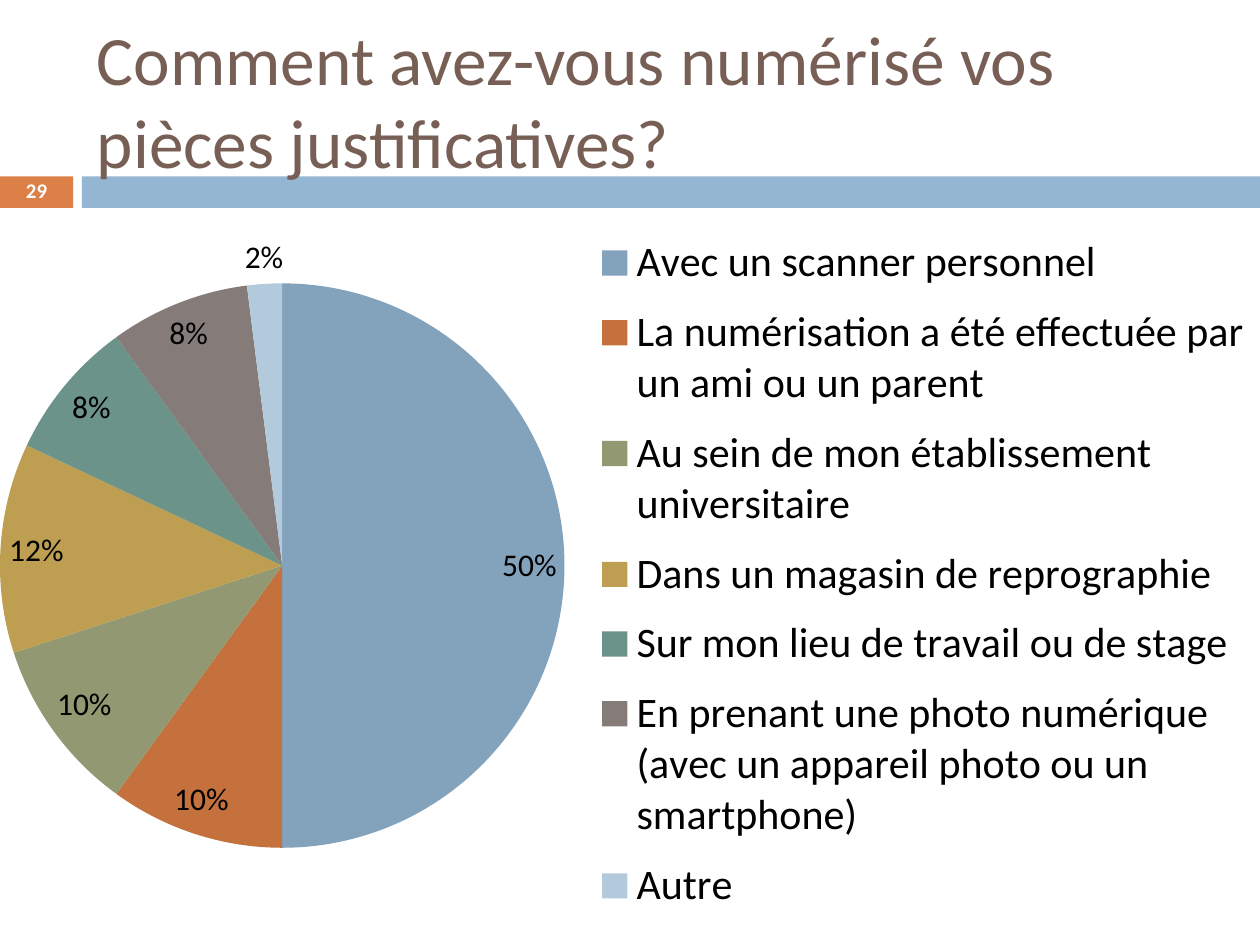
from lxml.etree import SubElement
from pptx import Presentation
from pptx.chart.data import CategoryChartData
from pptx.dml.color import RGBColor
from pptx.enum.chart import XL_CHART_TYPE, XL_LABEL_POSITION, XL_LEGEND_POSITION
from pptx.enum.shapes import MSO_SHAPE
from pptx.enum.text import MSO_ANCHOR, PP_ALIGN
from pptx.oxml.ns import qn
from pptx.util import Inches, Pt

FONT = "Calibri"
TITLE = "Comment avez-vous numérisé vos pièces justificatives?"
PAGE_NUMBER = "29"
ANSWERS = [  # label, percentage, slice colour
    ("Avec un scanner personnel", 50, "83A2BC"),
    ("La numérisation a été effectuée par un ami ou un parent", 10, "C4713E"),
    ("Au sein de mon établissement universitaire", 10, "929871"),
    ("Dans un magasin de reprographie", 12, "BE9E50"),
    ("Sur mon lieu de travail ou de stage", 8, "6C9389"),
    ("En prenant une photo numérique (avec un appareil photo ou un smartphone)", 8, "857C7A"),
    ("Autre", 2, "B3CADD"),
]
BANDS = [((0, 1.4, 0.58, 0.25), "DD8047"), ((0.65, 1.4, 9.35, 0.25), "94B6D2")]
PIE_LAYOUT = (0, 0.107, 0.448, 0.762)
LEGEND_LAYOUT = (0.465, 0.02, 0.535, 0.96)


def color(value):
    return RGBColor.from_string(value)


def add_band(slide, box, fill):
    shape = slide.shapes.add_shape(MSO_SHAPE.RECTANGLE, *map(Inches, box))
    shape.shadow.inherit = False
    shape.fill.solid()
    shape.fill.fore_color.rgb = color(fill)
    shape.line.fill.background()


def add_text(slide, box, text, size, fill, bold=False, align=PP_ALIGN.LEFT, spacing=1.0):
    frame = slide.shapes.add_textbox(*map(Inches, box)).text_frame
    frame.word_wrap = True
    frame.vertical_anchor = MSO_ANCHOR.MIDDLE
    paragraph = frame.paragraphs[0]
    paragraph.alignment = align
    paragraph.line_spacing = spacing
    run = paragraph.add_run()
    run.text = text
    set_font(run.font, size, fill, bold)


def set_font(font, size, fill="000000", bold=False):
    font.name, font.size, font.bold = FONT, Pt(size), bold
    font.color.rgb = color(fill)


def set_layout(element, box, inner=False):
    """Place a plot area or legend by fractions of the chart's size."""
    for old in element.findall(qn("c:layout")):
        element.remove(old)
    layout = element.makeelement(qn("c:layout"))
    manual = SubElement(layout, qn("c:manualLayout"))
    settings = [("layoutTarget", "inner")] if inner else []
    settings += [("xMode", "edge"), ("yMode", "edge"), *zip("xywh", box)]
    for name, value in settings:
        SubElement(manual, qn(f"c:{name}")).set("val", str(value))
    position = element.find(qn("c:legendPos"))
    if position is None:
        element.insert(0, layout)
    else:
        position.addnext(layout)


def add_pie(slide, box):
    labels, values, fills = zip(*ANSWERS)
    data = CategoryChartData(number_format="0")
    data.categories = labels
    data.add_series("Series 1", values)
    chart = slide.shapes.add_chart(XL_CHART_TYPE.PIE, *map(Inches, box), data).chart
    chart.has_title = False
    set_font(chart.font, 18)

    plot = chart.plots[0]
    plot.vary_by_categories = True
    for index, fill in enumerate(fills):
        point_format = plot.series[0].points[index].format
        point_format.fill.solid()
        point_format.fill.fore_color.rgb = color(fill)
        point_format.line.fill.background()

    plot.has_data_labels = True
    data_labels = plot.data_labels
    data_labels.show_percentage = True
    data_labels.show_value = False
    data_labels.number_format = "0%"
    data_labels.number_format_is_linked = False
    data_labels.position = XL_LABEL_POSITION.BEST_FIT
    set_font(data_labels.font, 18)

    chart.has_legend = True
    legend = chart.legend
    legend.position = XL_LEGEND_POSITION.RIGHT
    legend.include_in_layout = False
    set_font(legend.font, 24)
    set_layout(chart.element.find(f".//{qn('c:plotArea')}"), PIE_LAYOUT, inner=True)
    set_layout(chart.element.find(f".//{qn('c:legend')}"), LEGEND_LAYOUT)


def main():
    presentation = Presentation()
    presentation.slide_width, presentation.slide_height = Inches(10), Inches(7.5)
    slide = presentation.slides.add_slide(presentation.slide_layouts[6])
    for box, fill in BANDS:
        add_band(slide, box, fill)
    add_text(slide, (0, 1.39, 0.58, 0.27), PAGE_NUMBER, 11.9, "FFFFFF",
             bold=True, align=PP_ALIGN.CENTER, spacing=0.8)
    add_text(slide, (0.67, 0.25, 8.92, 1.08), TITLE, 39.6, "775F55")
    add_pie(slide, (0, 1.62, 10, 5.88))
    presentation.save("out.pptx")


if __name__ == "__main__":
    main()
